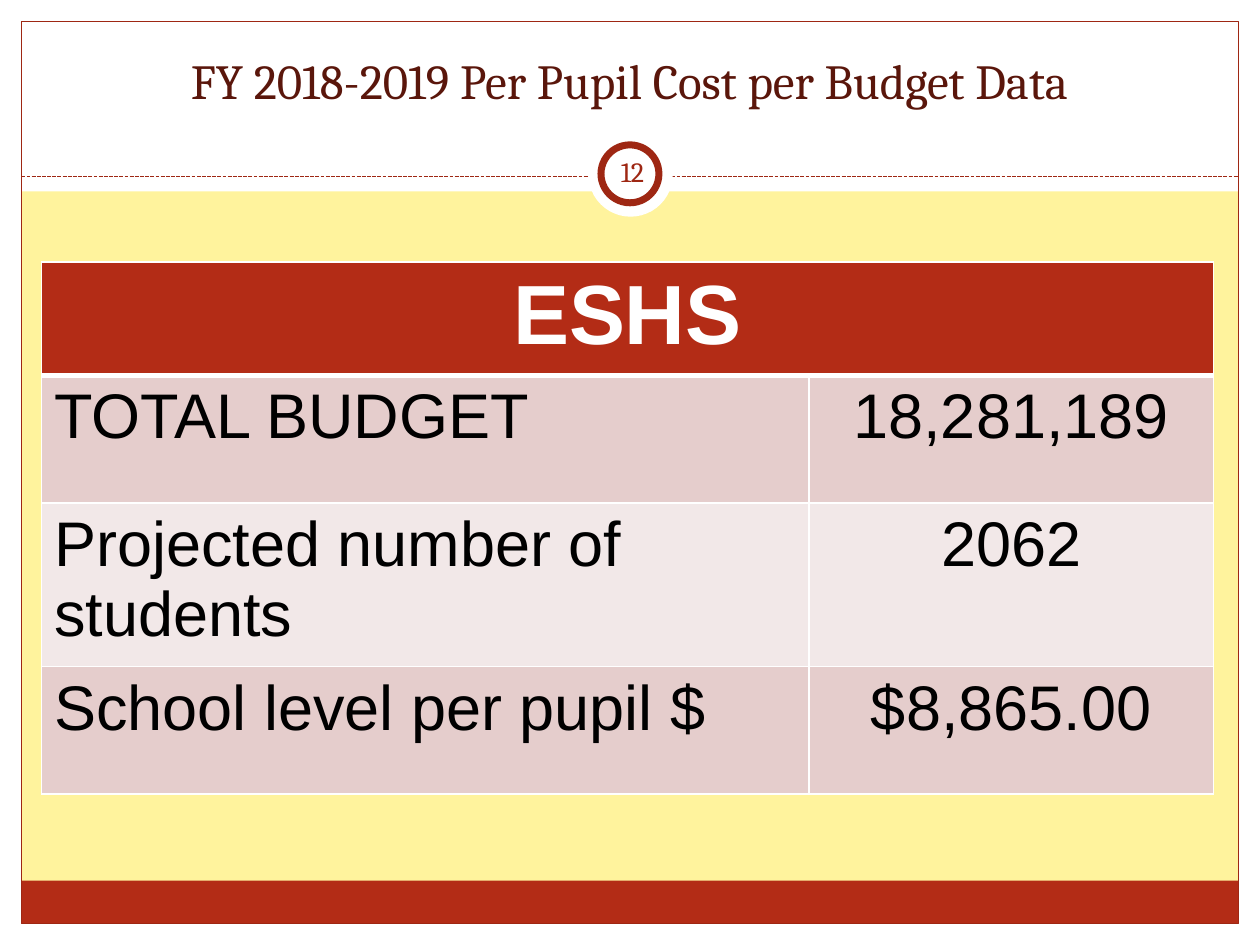
from dataclasses import dataclass

from lxml import etree
from pptx import Presentation
from pptx import util as u
from pptx.dml.color import RGBColor
from pptx.enum import dml, shapes, text
from pptx.oxml import ns

WHITE = RGBColor(0xFF, 0xFF, 0xFF)
BLACK = RGBColor(0x00, 0x00, 0x00)
YELLOW = RGBColor(0xFF, 0xF3, 0x9D)
RED = RGBColor(0xB3, 0x2C, 0x16)
DARK_RED = RGBColor(0x9E, 0x27, 0x13)
MAROON = RGBColor(0x5A, 0x16, 0x0B)
ROSE = RGBColor(0xE5, 0xCD, 0xCC)
PALE_ROSE = RGBColor(0xF2, 0xE8, 0xE8)

COLUMNS, ROWS = 100, 75
UNIT = u.Inches(0.1)
MARGIN = 1.7
INNER = COLUMNS - 2 * MARGIN

RECTANGLE = shapes.MSO_SHAPE.RECTANGLE
OVAL = shapes.MSO_SHAPE.OVAL
CENTER = text.PP_ALIGN.CENTER
LEFT = text.PP_ALIGN.LEFT


@dataclass
class Box:
    column: float
    row: float
    columns: float
    rows: float

    def lengths(self) -> list[int]:
        return [grid(n) for n in (self.column, self.row, self.columns, self.rows)]


@dataclass
class Panel:
    box: Box
    fill: RGBColor | None = WHITE
    line_width: float = 0
    kind: shapes.MSO_SHAPE = RECTANGLE


PANELS = [
    Panel(Box(0, ROWS - MARGIN, COLUMNS, MARGIN)),
    Panel(Box(0, 0, COLUMNS, 15.2)),
    Panel(Box(0, 0, MARGIN, ROWS)),
    Panel(Box(COLUMNS - MARGIN, 0, MARGIN, ROWS)),
    Panel(Box(MARGIN, 69.9, INNER, 3.4), RED),
    Panel(Box(MARGIN, MARGIN, INNER, ROWS - 2 * MARGIN), None, 0.75),
]
BADGE = [
    Panel(Box(46.7, 10.5, 6.7, 6.7), kind=OVAL),
    Panel(Box(47.7, 11.5, 4.6, 4.6), line_width=4, kind=OVAL),
]

BUDGET = [
    ("TOTAL BUDGET", "18,281,189"),
    ("Projected number of students", "2062"),
    ("School level per pupil $", "$8,865.00"),
]
TABLE_BOX = Box(3.3, 20.8, 93, 40.1)
TABLE_COLUMNS = [60.9, 32.1]
TABLE_ROWS = [8.2, 10.1, 11.7, 10.1]


def grid(count: float) -> int:
    return round(count * UNIT)


def write(frame, content: str, *, size: float, color: RGBColor, font: str = "Arial",
          bold: bool = False, align=CENTER, anchor=text.MSO_ANCHOR.TOP) -> None:
    frame.word_wrap = True
    frame.vertical_anchor = anchor
    paragraph = frame.paragraphs[0]
    paragraph.alignment = align
    run = paragraph.add_run()
    run.text = content
    run.font.size = u.Pt(size)
    run.font.name = font
    run.font.bold = bold
    run.font.color.rgb = color


def draw_panel(slide, panel: Panel) -> None:
    shape = slide.shapes.add_shape(panel.kind, *panel.box.lengths())
    shape.shadow.inherit = False
    if panel.fill is None:
        shape.fill.background()
    else:
        shape.fill.solid()
        shape.fill.fore_color.rgb = panel.fill
    if panel.line_width:
        shape.line.color.rgb = DARK_RED
        shape.line.width = u.Pt(panel.line_width)
    else:
        shape.line.fill.background()


def draw_divider(slide, row: float) -> None:
    divider = slide.shapes.add_connector(
        shapes.MSO_CONNECTOR.STRAIGHT,
        grid(MARGIN), grid(row), grid(COLUMNS - MARGIN), grid(row))
    divider.line.color.rgb = DARK_RED
    divider.line.width = u.Pt(0.75)
    divider.line.dash_style = dml.MSO_LINE.SQUARE_DOT
    etree.SubElement(divider.element.spPr, ns.qn("a:effectLst"))


def style_cell(cell, fill: RGBColor, top: float = 1, bottom: float = 1) -> None:
    properties = cell._tc.get_or_add_tcPr()
    for side, width in (("L", 1), ("R", 1), ("T", top), ("B", bottom)):
        border = etree.SubElement(properties, ns.qn(f"a:ln{side}"), w=str(u.Pt(width)))
        solid = etree.SubElement(border, ns.qn("a:solidFill"))
        etree.SubElement(solid, ns.qn("a:srgbClr"), val=str(WHITE))
    cell.fill.solid()
    cell.fill.fore_color.rgb = fill


def draw_budget_table(slide) -> None:
    table = slide.shapes.add_table(
        len(TABLE_ROWS), len(TABLE_COLUMNS), *TABLE_BOX.lengths()).table
    for column, width in zip(table.columns, TABLE_COLUMNS):
        column.width = grid(width)
    for row, height in zip(table.rows, TABLE_ROWS):
        row.height = grid(height)
    for cell in table.rows[0].cells:
        style_cell(cell, RED, bottom=3)
    header = table.cell(0, 0)
    header.merge(table.cell(0, 1))
    write(header.text_frame, "ESHS", size=48, color=WHITE, bold=True)
    for row, values in enumerate(BUDGET, start=1):
        for column, value in enumerate(values):
            cell = table.cell(row, column)
            style_cell(cell, ROSE if row % 2 else PALE_ROSE, top=3 if row == 1 else 1)
            write(cell.text_frame, value, size=36, color=BLACK,
                  align=CENTER if column else LEFT)


def draw_title(slide) -> None:
    title = slide.shapes.title
    title.left, title.top, title.width, title.height = Box(3.3, 2.5, 93.3, 6.7).lengths()
    title.element.getparent().append(title.element)
    write(title.text_frame, "FY 2018-2019 Per Pupil Cost per Budget Data", size=28,
          color=MAROON, font="Cambria", anchor=text.MSO_ANCHOR.BOTTOM)


def draw_slide_number(slide) -> None:
    frame = slide.shapes.add_textbox(*Box(47.7, 11.2, 5, 4.8).lengths()).text_frame
    frame.margin_left = frame.margin_right = u.Inches(0.05)
    write(frame, "12", size=16, color=DARK_RED, font="Cambria",
          anchor=text.MSO_ANCHOR.MIDDLE)


def main() -> None:
    presentation = Presentation()
    presentation.slide_width = grid(COLUMNS)
    presentation.slide_height = grid(ROWS)
    slide = presentation.slides.add_slide(presentation.slide_layouts[5])
    slide.background.fill.solid()
    slide.background.fill.fore_color.rgb = YELLOW
    for panel in PANELS:
        draw_panel(slide, panel)
    draw_divider(slide, 14)
    for panel in BADGE:
        draw_panel(slide, panel)
    draw_title(slide)
    draw_slide_number(slide)
    draw_budget_table(slide)
    presentation.save("out.pptx")


if __name__ == "__main__":
    main()
